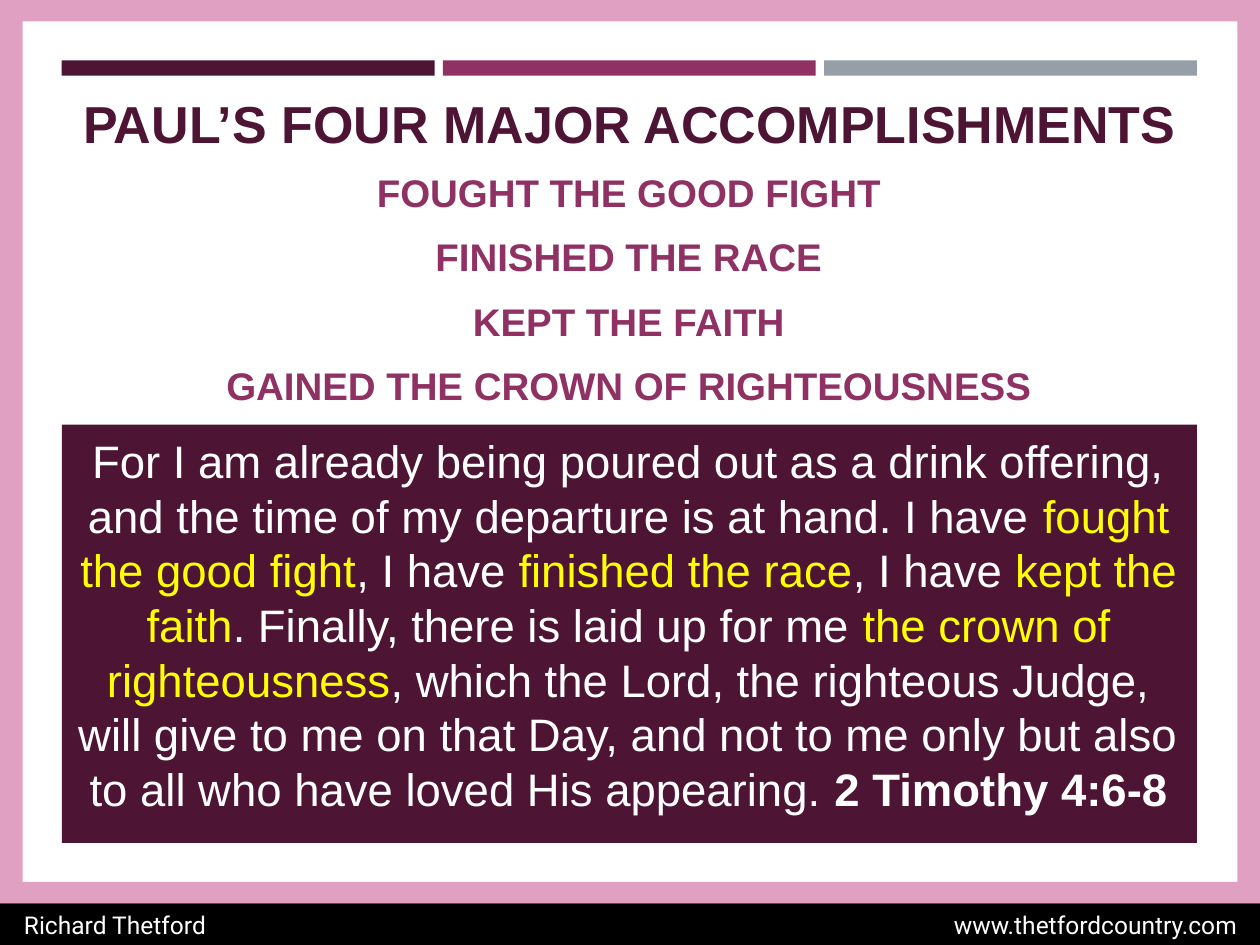
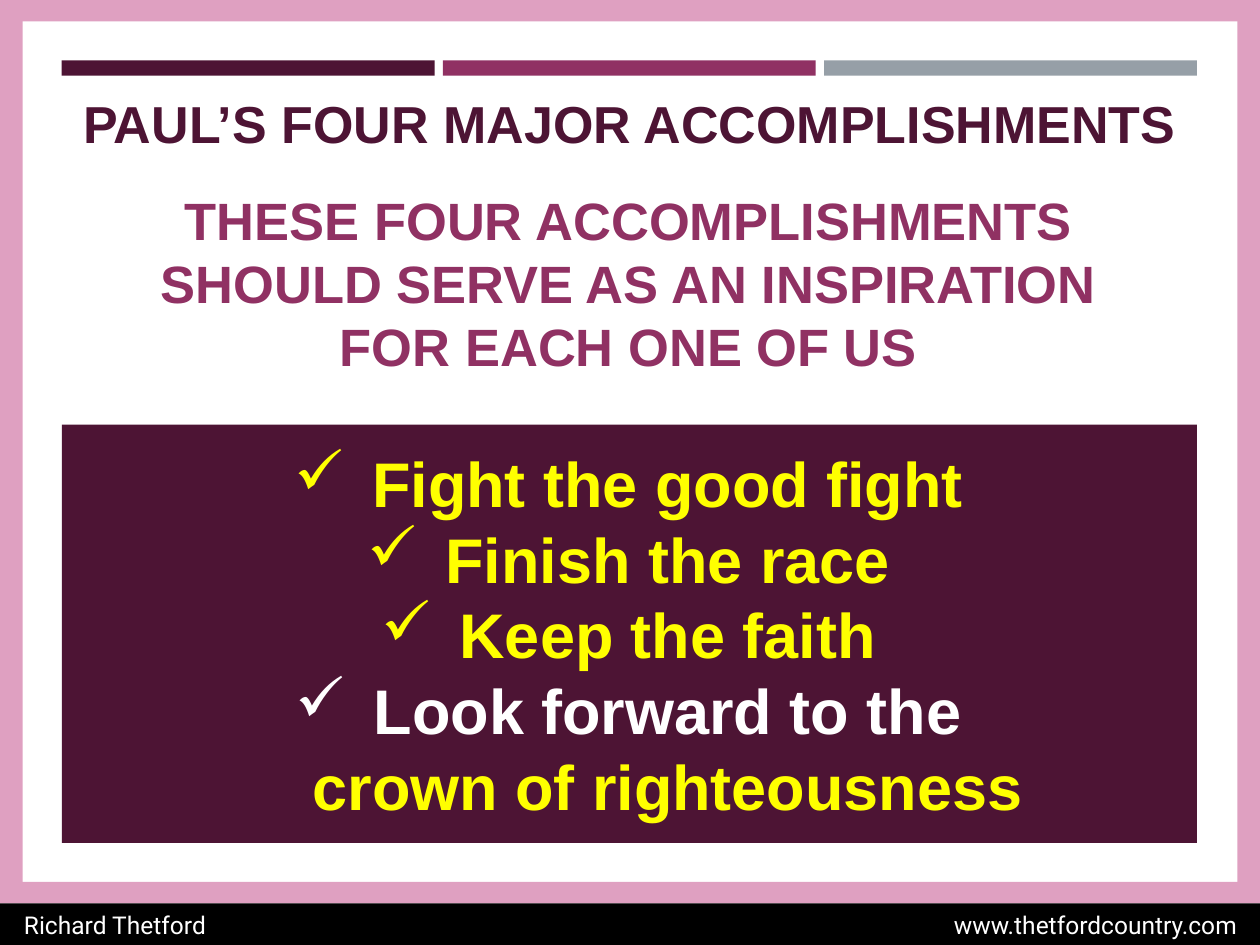
import dataclasses

import lxml.etree
import pptx
import pptx.dml.color
import pptx.enum.shapes
import pptx.enum.text
import pptx.oxml.ns
import pptx.util

Inches = pptx.util.Inches
Pt = pptx.util.Pt
ALIGN = pptx.enum.text.PP_ALIGN
ANCHOR = pptx.enum.text.MSO_ANCHOR


@dataclasses.dataclass(frozen=True)
class Theme:
    plum: str = "4D1434"
    berry: str = "903163"
    grey: str = "969FA7"
    pink: str = "DFA0C1"
    white: str = "FFFFFF"
    black: str = "000000"
    yellow: str = "FFFF00"
    font: str = "Arial"
    footer_font: str = "Roboto"
    title_size: float = 29.7
    list_size: float = 22
    message_size: float = 30
    passage_size: float = 26
    check_size: float = 36
    footer_size: float = 14


theme = Theme()


def add_rectangle(slide, left, top, width, height, color):
    shape = slide.shapes.add_shape(
        pptx.enum.shapes.MSO_SHAPE.RECTANGLE,
        Inches(left), Inches(top), Inches(width), Inches(height),
    )
    shape.shadow.inherit = False
    shape.fill.solid()
    shape.fill.fore_color.rgb = pptx.dml.color.RGBColor.from_string(color)
    shape.line.fill.background()
    return shape


def write_text(frame, paragraphs, size, font=theme.font, frame_format=None, **paragraph_format):
    """Fill a frame; each paragraph is a list of (text, color, bold), "\\n" breaks a line."""
    for name, value in {"word_wrap": True, **(frame_format or {})}.items():
        setattr(frame, name, value)
    for index, runs in enumerate(paragraphs):
        paragraph = frame.add_paragraph() if index else frame.paragraphs[0]
        for name, value in paragraph_format.items():
            setattr(paragraph, name, value)
        for text, color, bold in runs:
            for line_index, line in enumerate(text.split("\n")):
                if line_index:
                    paragraph.add_line_break()
                if not line:
                    continue
                run = paragraph.add_run()
                run.text = line
                for name, value in {"size": Pt(size), "name": font, "bold": bold}.items():
                    setattr(run.font, name, value)
                run.font.color.rgb = pptx.dml.color.RGBColor.from_string(color)


accomplishments = [
    "FOUGHT THE GOOD FIGHT",
    "FINISHED THE RACE",
    "KEPT THE FAITH",
    "GAINED THE CROWN OF RIGHTEOUSNESS",
]
passage = [
    ("For I am already being poured out as a drink offering, and the time of my "
     "departure is at hand. I have ", theme.white, False),
    ("fought the good fight", theme.yellow, False),
    (", I have ", theme.white, False),
    ("finished the race", theme.yellow, False),
    (", I have ", theme.white, False),
    ("kept the faith", theme.yellow, False),
    (". Finally, there is laid up for me ", theme.white, False),
    ("the crown of righteousness", theme.yellow, False),
    (", which the Lord, the righteous Judge, will give to me on that Day, and not to me "
     "only but also to all who have loved His appearing. ", theme.white, False),
    ("2 Timothy 4:6-8", theme.white, True),
]
message = (
    "THESE FOUR ACCOMPLISHMENTS\nSHOULD SERVE AS AN INSPIRATION\nFOR EACH ONE OF US"
)
checklist = [
    [("Fight the good fight", theme.yellow, True)],
    [("Finish the race", theme.yellow, True)],
    [("Keep the faith", theme.yellow, True)],
    [("Look forward to the\n", theme.white, True),
     ("crown of righteousness", theme.yellow, True)],
]
slide_contents = [
    {
        "subtitle": [[(line, theme.berry, True)] for line in accomplishments],
        "subtitle_size": theme.list_size,
        "subtitle_box": (1.29, 2.08),
        "body": [passage],
        "body_size": theme.passage_size,
        "body_box": (3.39, 3.16),
        "checked": False,
    },
    {
        "subtitle": [[(message, theme.berry, True)]],
        "subtitle_size": theme.message_size,
        "subtitle_box": (1.44, 1.69),
        "body": checklist,
        "body_size": theme.check_size,
        "body_box": (3.48, 3.13),
        "checked": True,
    },
]

presentation = pptx.Presentation()
presentation.slide_width = Inches(10)
presentation.slide_height = Inches(7.5)
margin, content_width = 0.49, 9.01
bar_width, bar_step = 2.96, 3.025

for content in slide_contents:
    slide = presentation.slides.add_slide(presentation.slide_layouts[6])

    for index, color in enumerate((theme.plum, theme.berry, theme.grey)):
        add_rectangle(slide, margin + index * bar_step, 0.48, bar_width, 0.12, color)
    add_rectangle(slide, margin, 3.37, content_width, 3.61, theme.plum)

    for left, top, width, height in (
        (0, 0, 0.18, 7.16), (9.82, 0, 0.18, 7.16), (0, 0, 10, 0.17), (0, 7, 10, 0.17),
    ):
        add_rectangle(slide, left, top, width, height, theme.pink)

    panel_edge = add_rectangle(slide, 0.24, 6.7, 9.51, 0.27, theme.white)
    panel_edge.line.color.rgb = pptx.dml.color.RGBColor.from_string(theme.white)
    panel_edge.line.width = Pt(1.75)

    footer = add_rectangle(slide, 0, 7.17, 10, 0.34, theme.black)
    write_text(
        footer.text_frame,
        [[("Richard Thetford\twww.thetfordcountry.com", theme.white, False)]],
        theme.footer_size, theme.footer_font,
        {"margin_left": Inches(0.19), "vertical_anchor": ANCHOR.MIDDLE},
        alignment=ALIGN.LEFT,
    )
    footer_properties = footer.text_frame.paragraphs[0]._p.get_or_add_pPr()
    tab_list = lxml.etree.SubElement(footer_properties, pptx.oxml.ns.qn("a:tabLst"))
    lxml.etree.SubElement(
        tab_list, pptx.oxml.ns.qn("a:tab"), pos=str(Inches(9.63)), algn="r"
    )

    title = slide.shapes.add_textbox(Inches(0.18), Inches(0.6), Inches(9.64), Inches(0.67))
    write_text(
        title.text_frame,
        [[("PAUL’S FOUR MAJOR ACCOMPLISHMENTS", theme.plum, True)]],
        theme.title_size,
        frame_format={"vertical_anchor": ANCHOR.BOTTOM},
        alignment=ALIGN.CENTER,
    )

    top, height = content["subtitle_box"]
    subtitle = slide.shapes.add_textbox(Inches(margin), Inches(top), Inches(9), Inches(height))
    write_text(
        subtitle.text_frame, content["subtitle"], content["subtitle_size"],
        alignment=ALIGN.CENTER,
        space_before=Pt(0.2 * content["subtitle_size"]), space_after=Pt(6),
    )

    top, height = content["body_box"]
    body = slide.shapes.add_textbox(Inches(margin), Inches(top), Inches(9), Inches(height))
    write_text(
        body.text_frame, content["body"], content["body_size"], alignment=ALIGN.CENTER
    )
    if content["checked"]:
        for paragraph in body.text_frame.paragraphs:
            properties = paragraph._p.get_or_add_pPr()
            properties.set("marL", str(Inches(0.62)))
            properties.set("indent", str(Inches(-0.62)))
            lxml.etree.SubElement(properties, pptx.oxml.ns.qn("a:buChar"), char="✓")

presentation.save("out.pptx")
